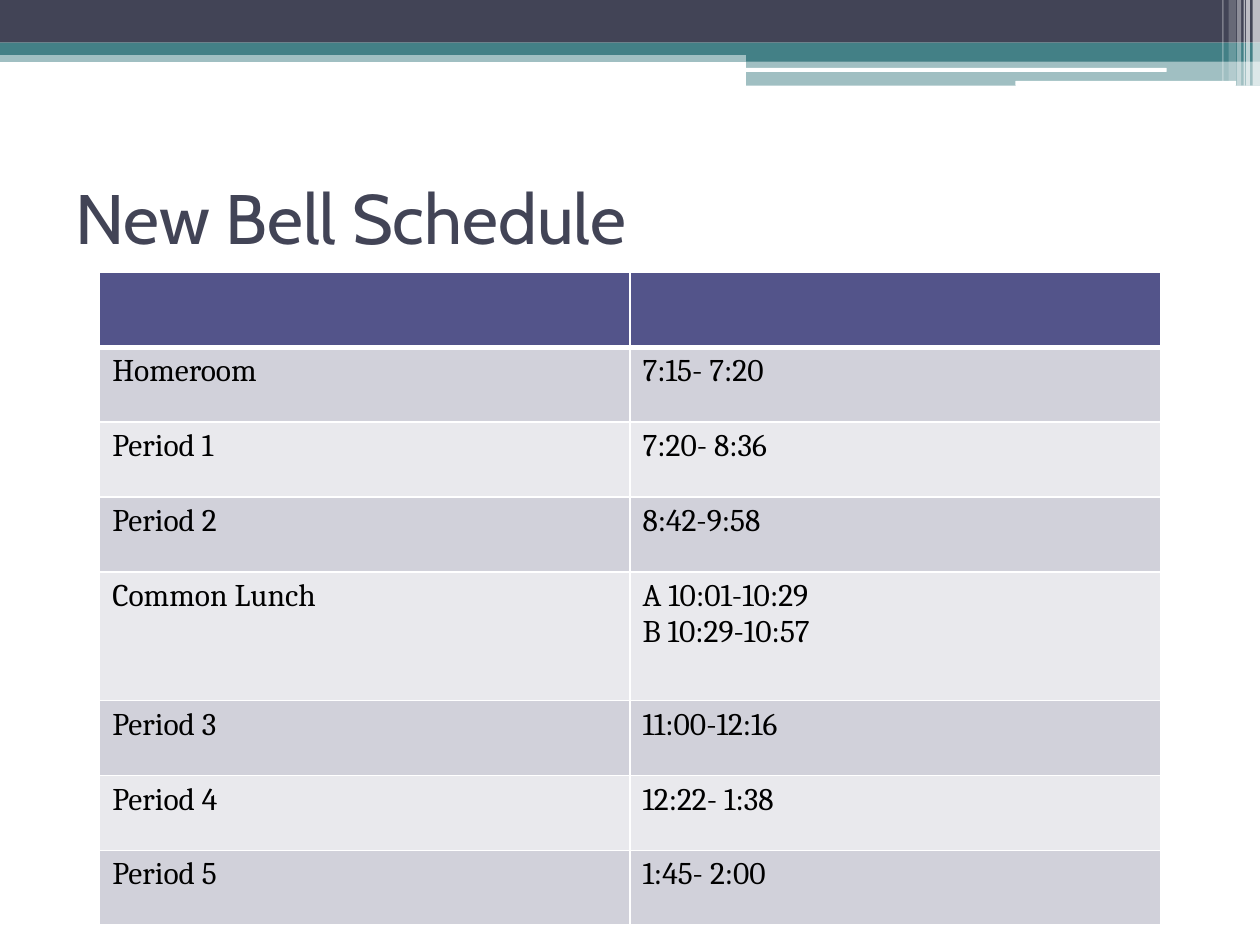
from pptx import Presentation
from pptx import util as u
from pptx.dml.color import RGBColor
from pptx.enum import shapes, text
from pptx.oxml.ns import qn
from lxml import etree

THEME = {
    "navy": "424456", "teal": "438086", "white": "FFFFFF", "black": "000000",
    "header": "53548A", "bands": ("D1D1DA", "E9E9ED"),
    "title_font": "Cabin", "body_font": "Cambria",
    "title_size": 40, "body_size": 18,
}
SLIDE_WIDTH, SLIDE_HEIGHT = 25.4, 19.05

TITLE = "New Bell Schedule"
SCHEDULE = [
    ("Homeroom", ["7:15- 7:20"]),
    ("Period 1", ["7:20- 8:36"]),
    ("Period 2", ["8:42-9:58"]),
    ("Common Lunch", ["A 10:01-10:29", "B 10:29-10:57"]),
    ("Period 3", ["11:00-12:16"]),
    ("Period 4", ["12:22- 1:38"]),
    ("Period 5", ["1:45- 2:00"]),
]

# left, top, width, height (cm), colour, opacity in percent
STEP_LEFT = 15.04
STEP_WIDTH = SLIDE_WIDTH - STEP_LEFT
BANDS = [
    (0, 1.02, SLIDE_WIDTH, 0.23, "teal", 50),
    (0, 0, SLIDE_WIDTH, 0.86, "navy", 100),
    (0, 0.86, SLIDE_WIDTH, 0.25, "teal", 100),
    (STEP_LEFT, 0.99, STEP_WIDTH, 0.25, "teal", 100),
    (STEP_LEFT, 1.22, STEP_WIDTH, 0.51, "teal", 50),
]
HIGHLIGHTS = [
    (15.01, 1.37, 8.51, 0.08, "white", 100),
    (20.47, 1.63, 4.45, 0.1, "white", 100),
]
# left, width, height (cm), opacity in percent
STRIPES = [
    (25.25, 0.15, 1.73, 65), (25.12, 0.08, 1.73, 65), (25.07, 0.03, 1.73, 60),
    (24.94, 0.08, 1.73, 40), (24.77, 0.15, 1.63, 20), (24.64, 0.03, 1.63, 30),
]

TABLE_LEFT, TABLE_TOP, COLUMN_WIDTH = 2.01, 5.49, 10.69
ROW_HEIGHT, TALL_ROW_HEIGHT = 1.51, 2.59


def add_bar(page, left, top, width, height, colour, opacity,
            kind=shapes.MSO_SHAPE.RECTANGLE):
    bar = page.shapes.add_shape(kind, u.Cm(left), u.Cm(top), u.Cm(width), u.Cm(height))
    bar.shadow.inherit = False
    bar.line.fill.background()
    bar.fill.solid()
    bar.fill.fore_color.rgb = RGBColor.from_string(THEME[colour])
    if opacity < 100:
        tint = bar.fill._xPr.find(".//" + qn("a:srgbClr"))
        etree.SubElement(tint, qn("a:alpha"), val=str(opacity * 1000))


def add_span(para, words, role, colour):
    span = para.add_run()
    span.text = words
    span.font.name = THEME[role + "_font"]
    span.font.size = u.Pt(THEME[role + "_size"])
    span.font.bold = False
    span.font.color.rgb = RGBColor.from_string(THEME[colour])


def style_cell(cell, fill, bottom_width=1):
    """Borders go in before the fill, as the schema orders them."""
    properties = cell._tc.get_or_add_tcPr()
    for side, width in (("L", 1), ("R", 1), ("T", 1), ("B", bottom_width)):
        line = etree.SubElement(properties, qn("a:ln" + side), w=str(u.Pt(width)))
        paint = etree.SubElement(line, qn("a:solidFill"))
        etree.SubElement(paint, qn("a:srgbClr"), val=THEME["white"])
    cell.fill.solid()
    cell.fill.fore_color.rgb = RGBColor.from_string(fill)


def add_title(page):
    box = page.shapes.add_textbox(u.Cm(1.27), u.Cm(2.87), u.Cm(22.86), u.Cm(2.97))
    frame = box.text_frame
    frame.word_wrap = True
    frame.vertical_anchor = text.MSO_ANCHOR.MIDDLE
    add_span(frame.paragraphs[0], TITLE, "title", "navy")


def add_schedule(page):
    heights = [ROW_HEIGHT] + [
        TALL_ROW_HEIGHT if len(times) > 1 else ROW_HEIGHT for _, times in SCHEDULE]
    table = page.shapes.add_table(
        len(heights), 2, u.Cm(TABLE_LEFT), u.Cm(TABLE_TOP),
        u.Cm(2 * COLUMN_WIDTH), u.Cm(sum(heights))).table
    for column in table.columns:
        column.width = u.Cm(COLUMN_WIDTH)
    for row, height in zip(table.rows, heights):
        row.height = u.Cm(height)
    for cell in table.rows[0].cells:
        style_cell(cell, THEME["header"], bottom_width=3)
    for index, (name, times) in enumerate(SCHEDULE):
        for cell, lines in zip(table.rows[index + 1].cells, ([name], times)):
            style_cell(cell, THEME["bands"][index % 2])
            for number, words in enumerate(lines):
                frame = cell.text_frame
                para = frame.add_paragraph() if number else frame.paragraphs[0]
                add_span(para, words, "body", "black")


def main():
    deck = Presentation()
    deck.slide_width, deck.slide_height = u.Cm(SLIDE_WIDTH), u.Cm(SLIDE_HEIGHT)
    page = deck.slides.add_slide(deck.slide_layouts[6])
    for band in BANDS:
        add_bar(page, *band)
    for highlight in HIGHLIGHTS:
        add_bar(page, *highlight, kind=shapes.MSO_SHAPE.ROUNDED_RECTANGLE)
    for left, width, height, opacity in STRIPES:
        add_bar(page, left, 0, width, height, "white", opacity)
    add_title(page)
    add_schedule(page)
    deck.save("out.pptx")


if __name__ == "__main__":
    main()
